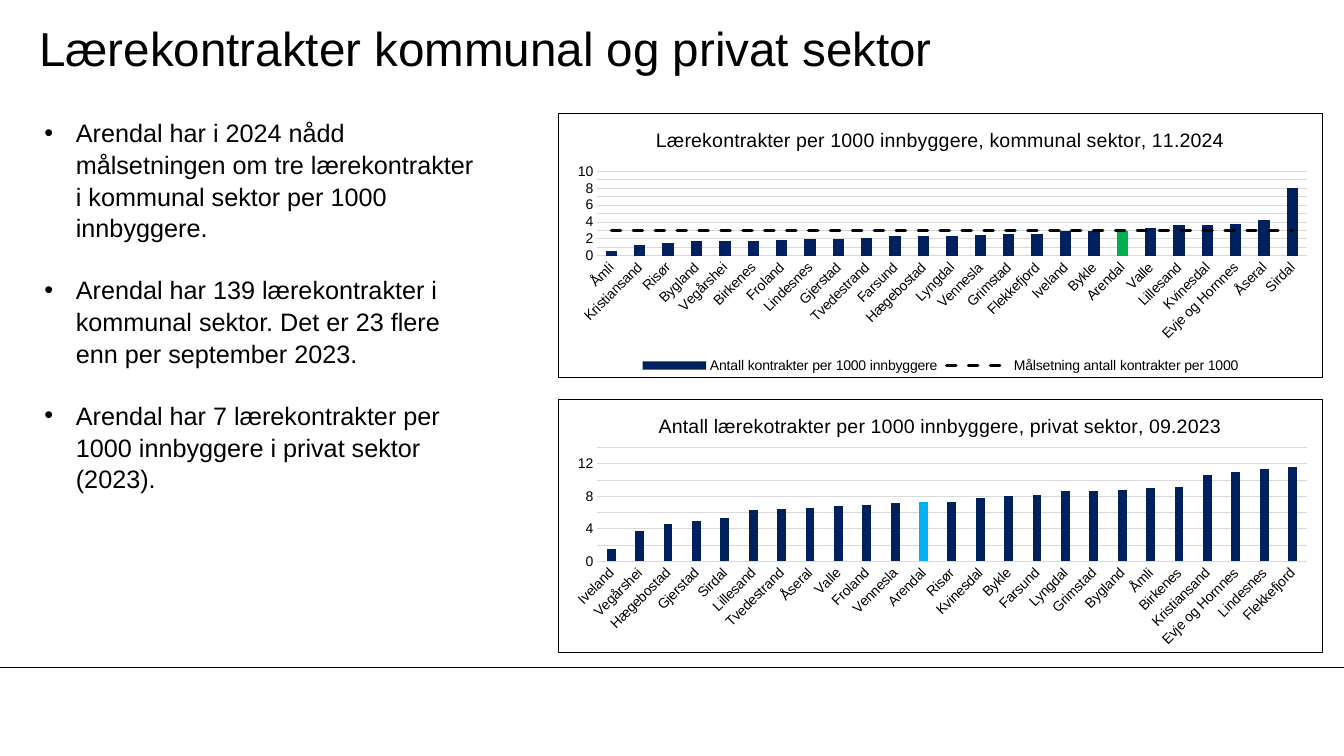
from copy import deepcopy
from lxml import etree
from pptx import Presentation
from pptx.chart.data import CategoryChartData
from pptx.dml.color import RGBColor
from pptx.enum.chart import XL_CHART_TYPE, XL_LEGEND_POSITION, XL_MARKER_STYLE, XL_TICK_MARK
from pptx.enum.dml import MSO_LINE
from pptx.enum.shapes import MSO_CONNECTOR
from pptx.enum.text import MSO_ANCHOR, MSO_AUTO_SIZE, PP_ALIGN
from pptx.oxml import parse_xml
from pptx.oxml.ns import nsdecls, qn
from pptx.util import Pt

COLUMN = XL_CHART_TYPE.COLUMN_CLUSTERED
BOTTOM = XL_LEGEND_POSITION.BOTTOM
NO_TICK = XL_TICK_MARK.NONE
NO_MARK = XL_MARKER_STYLE.NONE
DASH = MSO_LINE.DASH
STRAIGHT = MSO_CONNECTOR.STRAIGHT
MIDDLE = MSO_ANCHOR.MIDDLE
FIXED = MSO_AUTO_SIZE.NONE
LEFT = PP_ALIGN.LEFT
FONT, BLACK, GREY, NAVY = "Arial", "000000", "D9D9D9", "002060"

TITLE = "Lærekontrakter kommunal og privat sektor"
POINTS = [
    "Arendal har i 2024 nådd målsetningen om tre lærekontrakter i kommunal sektor per 1000 innbyggere.",
    "Arendal har 139 lærekontrakter i kommunal sektor. Det er 23 flere enn per september 2023.",
    "Arendal har 7 lærekontrakter per 1000 innbyggere i privat sektor (2023).",
]
PUBLIC = {
    "title": "Lærekontrakter per 1000 innbyggere, kommunal sektor, 11.2024",
    "name": "Antall kontrakter per 1000 innbyggere",
    "rates": [
        ("Åmli", 0.6), ("Kristiansand", 1.3), ("Risør", 1.5), ("Bygland", 1.8),
        ("Vegårshei", 1.8), ("Birkenes", 1.8), ("Froland", 1.9), ("Lindesnes", 2),
        ("Gjerstad", 2), ("Tvedestrand", 2.1), ("Farsund", 2.3), ("Hægebostad", 2.3),
        ("Lyngdal", 2.3), ("Vennesla", 2.5), ("Grimstad", 2.6), ("Flekkefjord", 2.6),
        ("Iveland", 2.9), ("Bykle", 3), ("Arendal", 3), ("Valle", 3.3),
        ("Lillesand", 3.6), ("Kvinesdal", 3.7), ("Evje og Hornnes", 3.8),
        ("Åseral", 4.3), ("Sirdal", 8),
    ],
    "goal": ("Målsetning antall kontrakter per 1000", 3),
    "mark": "00B050", "top": 80.6, "height": 189.4, "max": 10, "step": 2,
    "gap": 150, "overlap": 0, "plot": (0.05, 0.22, 0.93, 0.32),
}
PRIVATE = {
    "title": "Antall lærekotrakter per 1000 innbyggere, privat sektor, 09.2023",
    "name": "Series 1",
    "rates": [
        ("Iveland", 1.5), ("Vegårshei", 3.7), ("Hægebostad", 4.6), ("Gjerstad", 5),
        ("Sirdal", 5.4), ("Lillesand", 6.3), ("Tvedestrand", 6.5), ("Åseral", 6.6),
        ("Valle", 6.8), ("Froland", 7), ("Vennesla", 7.2), ("Arendal", 7.3),
        ("Risør", 7.3), ("Kvinesdal", 7.8), ("Bykle", 8), ("Farsund", 8.2),
        ("Lyngdal", 8.7), ("Grimstad", 8.7), ("Bygland", 8.8), ("Åmli", 9),
        ("Birkenes", 9.1), ("Kristiansand", 10.6), ("Evje og Hornnes", 11),
        ("Lindesnes", 11.4), ("Flekkefjord", 11.6),
    ],
    "goal": None,
    "mark": "00B0F0", "top": 285.1, "height": 181.4, "max": 14, "step": 4,
    "gap": 219, "overlap": -27, "plot": (0.05, 0.19, 0.93, 0.45),
}


def rgb(code):
    return RGBColor.from_string(code)


def style(font, size):
    font.name, font.size, font.bold = FONT, Pt(size), False
    font.color.rgb = rgb(BLACK)


def stroke(line, color, width=0.75):
    line.color.rgb = rgb(color)
    line.width = Pt(width)


def paint(part, color):
    part.format.fill.solid()
    part.format.fill.fore_color.rgb = rgb(color)


def place(shape, left, top, width, height):
    shape.left, shape.top = Pt(left), Pt(top)
    shape.width, shape.height = Pt(width), Pt(height)


def set_axes(chart, data):
    cats, vals = chart.category_axis, chart.value_axis
    for axis in (cats, vals):
        axis.major_tick_mark = axis.minor_tick_mark = NO_TICK
        style(axis.tick_labels.font, 10)
    stroke(cats.format.line, GREY)
    chart._chartSpace.xpath(".//c:catAx/c:txPr/a:bodyPr")[0].set("rot", "-2700000")
    vals.format.line.fill.background()
    vals.minimum_scale, vals.maximum_scale = 0, data["max"]
    vals.major_unit, vals.minor_unit = data["step"], data["step"] / 2
    vals.has_major_gridlines = vals.has_minor_gridlines = True
    stroke(vals.major_gridlines.format.line, GREY)
    major, minor = chart._chartSpace.xpath(".//c:valAx/c:majorGridlines | .//c:valAx/c:minorGridlines")
    minor.append(deepcopy(major.find(qn("c:spPr"))))
    vals.tick_labels.number_format = "0"
    vals.tick_labels.number_format_is_linked = False


def set_frame(chart, plot):
    area = chart._chartSpace.xpath(".//c:plotArea")[0]
    for old in area.findall(qn("c:layout")):
        area.remove(old)
    sizes = "".join(f'<c:{key} val="{val}"/>' for key, val in zip("xywh", plot))
    area.insert(0, parse_xml(
        f'<c:layout {nsdecls("c")}><c:manualLayout><c:layoutTarget val="inner"/>'
        f'<c:xMode val="edge"/><c:yMode val="edge"/>{sizes}</c:manualLayout></c:layout>'))
    chart._chartSpace.find(qn("c:chart")).addnext(parse_xml(
        f'<c:spPr {nsdecls("c", "a")}><a:solidFill><a:srgbClr val="FFFFFF"/></a:solidFill>'
        f'<a:ln w="9525"><a:solidFill><a:srgbClr val="{BLACK}"/></a:solidFill></a:ln></c:spPr>'))


def add_goal(chart):
    bars = chart._chartSpace.xpath(".//c:barChart")[0]
    goal = bars.findall(qn("c:ser"))[1]
    for flag in goal.findall(qn("c:invertIfNegative")):
        goal.remove(flag)
    lines = parse_xml(
        f'<c:lineChart {nsdecls("c")}><c:grouping val="standard"/>'
        '<c:varyColors val="0"/><c:marker val="1"/></c:lineChart>')
    lines.insert(2, goal)
    for link in bars.findall(qn("c:axId")):
        lines.append(deepcopy(link))
    bars.addnext(lines)
    target = chart.plots[1].series[0]
    target.smooth = False
    target.marker.style = NO_MARK
    stroke(target.format.line, BLACK, 2.25)
    target.format.line.dash_style = DASH
    goal.find(qn("c:spPr")).find(qn("a:ln")).set("cap", "rnd")


def draw_chart(slide, data):
    towns, rates = zip(*data["rates"])
    feed = CategoryChartData()
    feed.categories = towns
    feed.add_series(data["name"], rates)
    if data["goal"]:
        label, level = data["goal"]
        feed.add_series(label, [level] * len(towns))
    chart = slide.shapes.add_chart(
        COLUMN, Pt(398.9), Pt(data["top"]), Pt(545.8), Pt(data["height"]), feed).chart
    style(chart.font, 10)
    chart.has_title = True
    chart.chart_title.include_in_layout = False
    head = chart.chart_title.text_frame
    head.text = data["title"]
    style(head.paragraphs[0].runs[0].font, 14)
    bars = chart.plots[0]
    bars.vary_by_categories = False
    bars.gap_width, bars.overlap = data["gap"], data["overlap"]
    paint(bars.series[0], NAVY)
    paint(bars.series[0].points[towns.index("Arendal")], data["mark"])
    set_axes(chart, data)
    set_frame(chart, data["plot"])
    chart.has_legend = bool(data["goal"])
    if data["goal"]:
        add_goal(chart)
        chart.legend.position = BOTTOM
        chart.legend.include_in_layout = False
        style(chart.legend.font, 10)


def draw_text(slide):
    title, body = slide.placeholders
    place(title, 28, 7, 799, 54)
    frame = title.text_frame
    frame.text = TITLE
    frame.auto_size = FIXED
    frame.vertical_anchor = MIDDLE
    frame.margin_left = frame.margin_right = frame.margin_top = frame.margin_bottom = 0
    frame.paragraphs[0].alignment = LEFT
    style(frame.paragraphs[0].runs[0].font, 34)
    place(body, 24.5, 79.2, 322.6, 334)
    frame = body.text_frame
    frame.text = "\n".join(POINTS)
    frame.auto_size = FIXED
    for rank, para in enumerate(frame.paragraphs):
        props = para._p.get_or_add_pPr()
        props.set("marL", str(Pt(22.5)))
        props.set("indent", str(-Pt(22.5)))
        etree.SubElement(props, qn("a:buFont"), typeface=FONT)
        etree.SubElement(props, qn("a:buChar"), char="•")
        para.line_spacing = 1.05
        para.space_before = Pt(21.6 if rank else 0)
        style(para.runs[0].font, 18)


def main():
    deck = Presentation()
    deck.slide_width, deck.slide_height = Pt(960), Pt(540)
    slide = deck.slides.add_slide(deck.slide_layouts[1])
    rule = slide.shapes.add_connector(STRAIGHT, 0, Pt(476.6), Pt(960), Pt(476.6))
    stroke(rule.line, BLACK)
    etree.SubElement(rule._element.spPr, qn("a:effectLst"))
    draw_text(slide)
    for data in (PRIVATE, PUBLIC):
        draw_chart(slide, data)
    deck.save("out.pptx")


if __name__ == "__main__":
    main()
